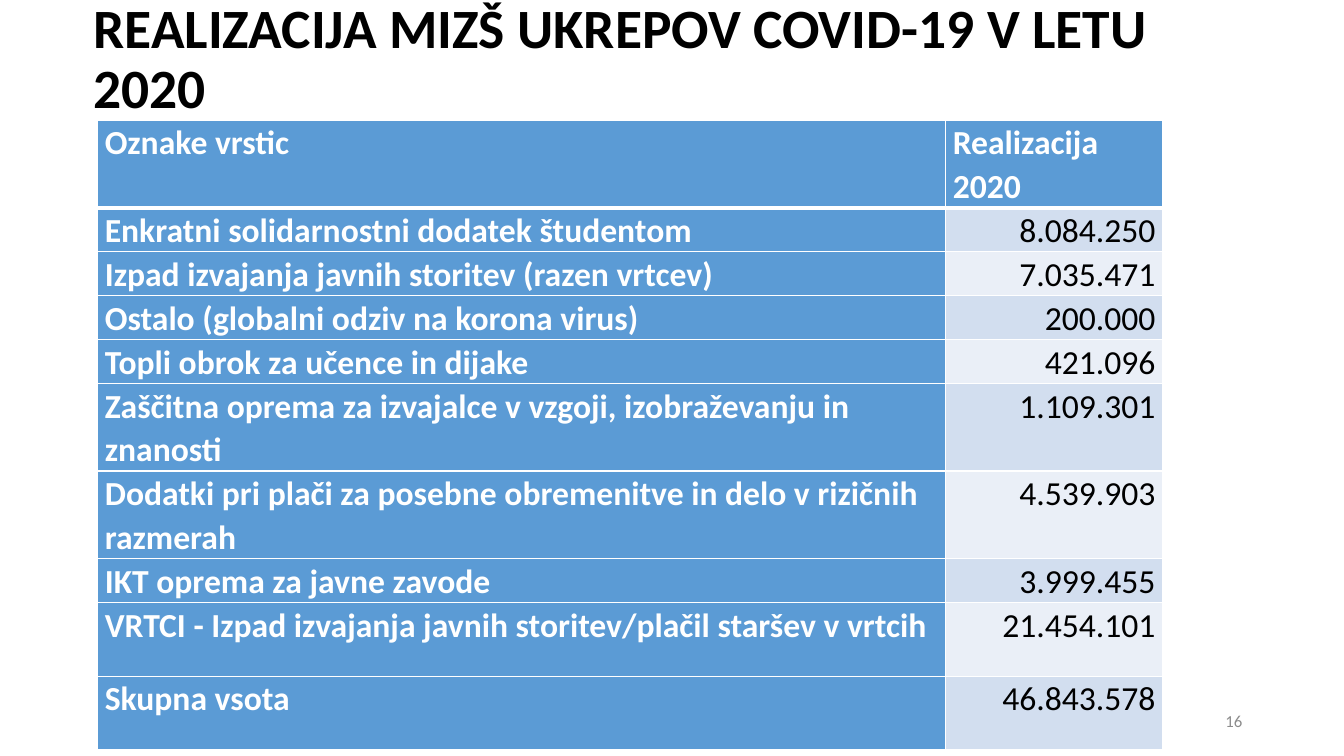
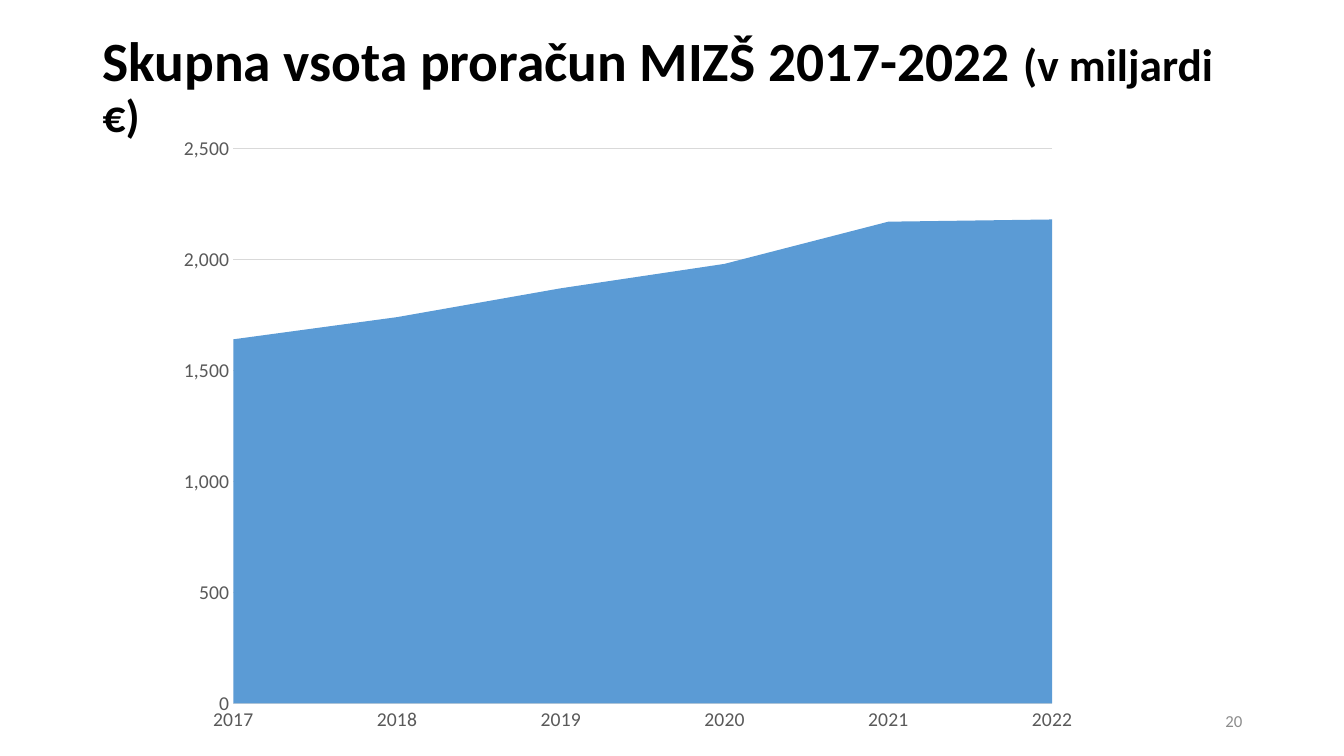
from dataclasses import dataclass
from typing import NamedTuple

from lxml import etree
from pptx import Presentation
from pptx.chart import data as chart_data
from pptx.dml.color import RGBColor
from pptx.enum import chart as chart_enum, text
from pptx.oxml import ns
from pptx.util import Inches, Pt


@dataclass(frozen=True)
class Theme:
    font: str = "Calibri"
    black: RGBColor = RGBColor(0x00, 0x00, 0x00)
    white: RGBColor = RGBColor(0xFF, 0xFF, 0xFF)
    accent: RGBColor = RGBColor(0x5B, 0x9B, 0xD5)
    band_dark: RGBColor = RGBColor(0xD2, 0xDE, 0xEF)
    band_light: RGBColor = RGBColor(0xEA, 0xEF, 0xF7)
    axis_text: RGBColor = RGBColor(0x59, 0x59, 0x59)
    axis_line: RGBColor = RGBColor(0xD9, 0xD9, 0xD9)
    page_number: RGBColor = RGBColor(0x8C, 0x8C, 0x8C)
    title_size: float = 39.6
    subtitle_size: float = 32.4
    table_size: float = 24
    axis_size: float = 14
    number_size: float = 12


class Box(NamedTuple):
    left: float
    top: float
    width: float
    height: float

    def lengths(self) -> list:
        return [Inches(value) for value in self]


class TableRow(NamedTuple):
    label: str
    amount: str
    height: float


THEME = Theme()
ONE_LINE, TWO_LINES = 0.37, 0.73
NUMBER_BOX = Box(9.42, 6.95, 3, 0.4)
COLUMN_WIDTHS = (8.41, 2.15)
TABLE_ROWS = (
    TableRow("Oznake vrstic", "Realizacija 2020", TWO_LINES),
    TableRow("Enkratni solidarnostni dodatek študentom", "8.084.250", ONE_LINE),
    TableRow("Izpad izvajanja javnih storitev (razen vrtcev)", "7.035.471", ONE_LINE),
    TableRow("Ostalo (globalni odziv na korona virus)", "200.000", ONE_LINE),
    TableRow("Topli obrok za učence in dijake", "421.096", ONE_LINE),
    TableRow("Zaščitna oprema za izvajalce v vzgoji, izobraževanju in znanosti",
             "1.109.301", TWO_LINES),
    TableRow("Dodatki pri plači za posebne obremenitve in delo v rizičnih razmerah",
             "4.539.903", TWO_LINES),
    TableRow("IKT oprema za javne zavode", "3.999.455", ONE_LINE),
    TableRow("VRTCI - Izpad izvajanja javnih storitev/plačil staršev v vrtcih",
             "21.454.101", TWO_LINES),
    TableRow("Skupna vsota", "46.843.578", TWO_LINES),
)
BUDGET = {"2017": 1640, "2018": 1740, "2019": 1870,
          "2020": 1980, "2021": 2170, "2022": 2180}


def set_font(font, size: float, color: RGBColor, bold: bool = False) -> None:
    font.name = THEME.font
    font.size = Pt(size)
    font.bold = bold
    font.color.rgb = color


def add_paragraph_box(slide, box: Box):
    """Add a wrapping, vertically centred text box and return its paragraph."""
    frame = slide.shapes.add_textbox(*box.lengths()).text_frame
    frame.word_wrap = True
    frame.vertical_anchor = text.MSO_ANCHOR.MIDDLE
    return frame.paragraphs[0]


def add_title(slide, box: Box, title: str, subtitle: str = "") -> None:
    paragraph = add_paragraph_box(slide, box)
    paragraph.line_spacing = 0.9
    set_font(paragraph.font, THEME.title_size, THEME.black, bold=True)
    paragraph.add_run().text = title
    if subtitle:
        run = paragraph.add_run()
        run.text = subtitle
        run.font.size = Pt(THEME.subtitle_size)


def add_page_number(slide, number: int) -> None:
    paragraph = add_paragraph_box(slide, NUMBER_BOX)
    paragraph.text = str(number)
    paragraph.alignment = text.PP_ALIGN.RIGHT
    set_font(paragraph.font, THEME.number_size, THEME.page_number)


def set_borders(cell, top: float = 1, bottom: float = 1) -> None:
    """Draw white cell borders; widths are in points."""
    properties = cell._tc.get_or_add_tcPr()
    for side, width in (("L", 1), ("R", 1), ("T", top), ("B", bottom)):
        line = etree.SubElement(properties, ns.qn(f"a:ln{side}"), w=str(Pt(width)))
        fill = etree.SubElement(line, ns.qn("a:solidFill"))
        etree.SubElement(fill, ns.qn("a:srgbClr"), val=str(THEME.white))


def fill_cell(cell, content: str, row: int, column: int) -> None:
    is_heading = row == 0 or column == 0
    set_borders(cell, top=3 if row == 1 else 1, bottom=3 if row == 0 else 1)
    cell.margin_left = cell.margin_right = Inches(0.07)
    cell.margin_top = cell.margin_bottom = 0
    band = THEME.band_dark if row % 2 else THEME.band_light
    cell.fill.solid()
    cell.fill.fore_color.rgb = THEME.accent if is_heading else band
    paragraph = cell.text_frame.paragraphs[0]
    paragraph.text = content
    paragraph.line_spacing = 1.07
    if not is_heading:
        paragraph.alignment = text.PP_ALIGN.RIGHT
    set_font(paragraph.font, THEME.table_size,
             THEME.white if is_heading else THEME.black, bold=is_heading)


def add_measures_table(slide, left: float, top: float) -> None:
    box = Box(left, top, sum(COLUMN_WIDTHS), sum(row.height for row in TABLE_ROWS))
    table = slide.shapes.add_table(
        len(TABLE_ROWS), len(COLUMN_WIDTHS), *box.lengths()).table
    for column, width in zip(table.columns, COLUMN_WIDTHS):
        column.width = Inches(width)
    for row_index, row in enumerate(TABLE_ROWS):
        table.rows[row_index].height = Inches(row.height)
        for column_index, content in enumerate((row.label, row.amount)):
            fill_cell(table.cell(row_index, column_index), content,
                      row_index, column_index)


def style_line(line) -> None:
    line.color.rgb = THEME.axis_line
    line.width = Pt(0.75)


def add_budget_chart(slide, box: Box) -> None:
    data = chart_data.CategoryChartData(number_format="#,##0")
    data.categories = list(BUDGET)
    data.add_series("Series 1", list(BUDGET.values()))
    chart = slide.shapes.add_chart(
        chart_enum.XL_CHART_TYPE.AREA, *box.lengths(), data).chart
    chart.has_title = False
    chart.has_legend = False
    set_font(chart.font, THEME.axis_size, THEME.black)

    plot = chart.plots[0]
    plot.vary_by_categories = False
    area_fill = plot.series[0].format.fill
    area_fill.solid()
    area_fill.fore_color.rgb = THEME.accent

    years, amounts = chart.category_axis, chart.value_axis
    for axis in (years, amounts):
        axis.major_tick_mark = axis.minor_tick_mark = chart_enum.XL_TICK_MARK.NONE
        set_font(axis.tick_labels.font, THEME.axis_size, THEME.axis_text)
    years.has_major_gridlines = False
    style_line(years.format.line)
    amounts.minimum_scale, amounts.maximum_scale = 0, 2500
    amounts.major_unit = 500
    amounts.tick_labels.number_format = "#,##0"
    amounts.tick_labels.number_format_is_linked = False
    amounts.format.line.fill.background()
    amounts.has_major_gridlines = True
    style_line(amounts.major_gridlines.format.line)


def main() -> None:
    presentation = Presentation()
    presentation.slide_width = Inches(13.33)
    presentation.slide_height = Inches(7.5)
    blank_layout = presentation.slide_layouts[6]

    measures = presentation.slides.add_slide(blank_layout)
    add_measures_table(measures, 0.97, 1.19)
    add_title(measures, Box(0.83, 0.11, 11.5, 0.98),
              "REALIZACIJA MIZŠ UKREPOV COVID-19 V LETU 2020")
    add_page_number(measures, 16)

    budget = presentation.slides.add_slide(blank_layout)
    add_title(budget, Box(0.92, 0.4, 11.5, 0.95),
              "Skupna vsota proračun MIZŠ 2017-2022 ", "(v miljardi €)")
    add_budget_chart(budget, Box(1.64, 1.23, 9.18, 6.15))
    add_page_number(budget, 20)

    presentation.save("out.pptx")


if __name__ == "__main__":
    main()
